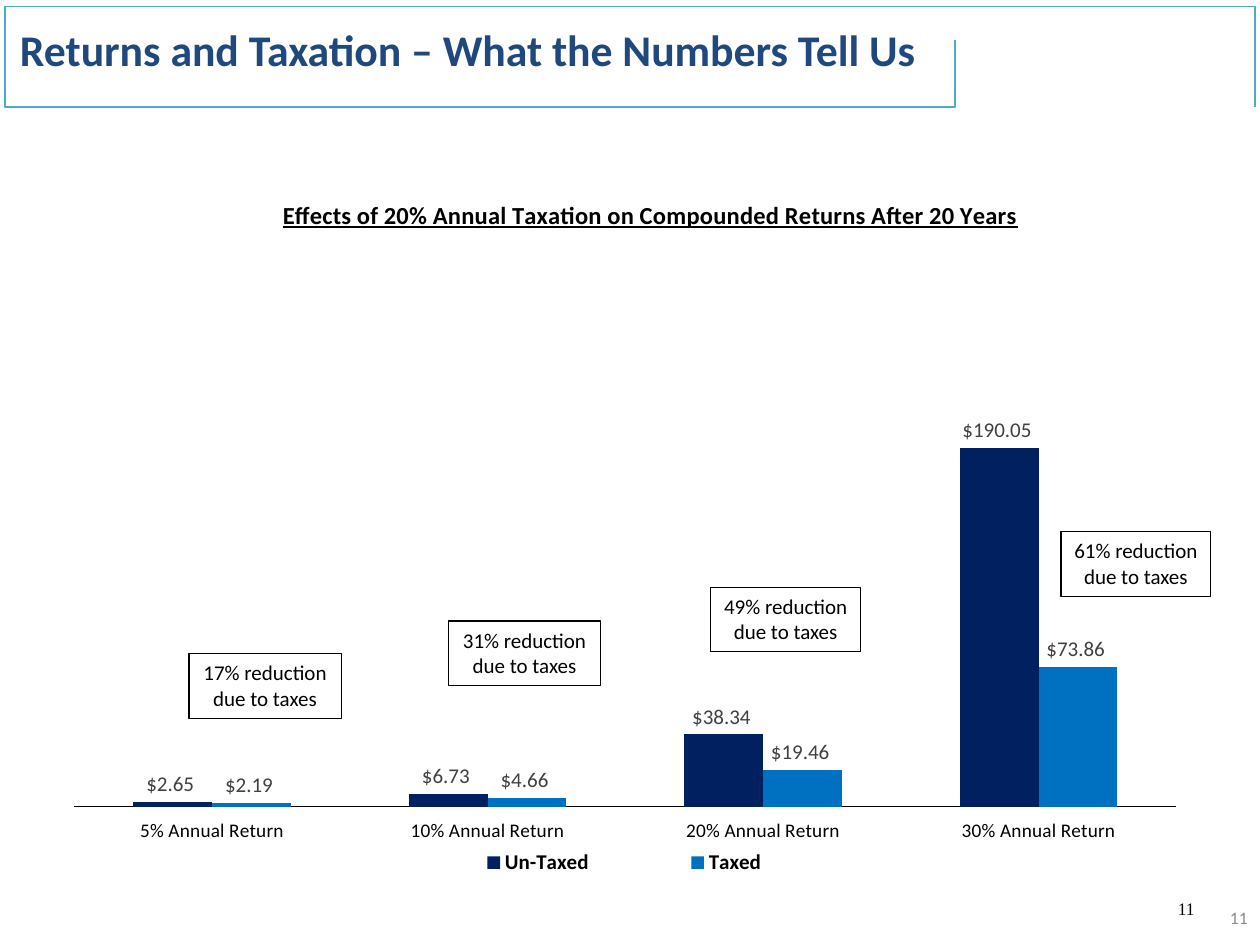
from dataclasses import dataclass

from lxml import etree
from pptx import Presentation
from pptx.chart.data import CategoryChartData
from pptx.dml.color import RGBColor
from pptx.enum.chart import XL_CHART_TYPE as ChartType
from pptx.enum.chart import XL_LABEL_POSITION as LabelPos
from pptx.enum.chart import XL_LEGEND_POSITION as LegendPos
from pptx.enum.chart import XL_TICK_LABEL_POSITION as TickLabelPos
from pptx.enum.chart import XL_TICK_MARK as TickMark
from pptx.enum.shapes import MSO_SHAPE as Shape
from pptx.enum.text import MSO_ANCHOR as Anchor
from pptx.enum.text import MSO_AUTO_SIZE as AutoSize
from pptx.enum.text import PP_ALIGN as Align
from pptx.oxml.ns import qn
from pptx.util import Cm, Pt


@dataclass(frozen=True)
class Theme:
    black: RGBColor = RGBColor(0, 0, 0)
    heading: RGBColor = RGBColor(0x1F, 0x49, 0x7D)
    frame: RGBColor = RGBColor(0x4B, 0xAC, 0xC6)
    untaxed: RGBColor = RGBColor(0x00, 0x20, 0x60)
    taxed: RGBColor = RGBColor(0x00, 0x70, 0xC0)
    label: RGBColor = RGBColor(0x40, 0x40, 0x40)
    page: RGBColor = RGBColor(0x8C, 0x8C, 0x8C)
    sans: str = "Calibri"
    serif: str = "Times New Roman"
    heading_size: Pt = Pt(25)
    title_size: Pt = Pt(14)
    body_size: Pt = Pt(12)
    axis_size: Pt = Pt(11)
    small_size: Pt = Pt(10)


theme = Theme()
DOLLARS = '"$"#,##0.00_);[Red]\\("$"#,##0.00\\)'


def apply_format(target, color=None, **values):
    for name, value in values.items():
        setattr(target, name, value)
    if color is not None:
        target.color.rgb = color


def place_part(part, index, **fractions):
    """Give a chart part a manual layout in fractions of the chart."""
    for old in part.findall(qn("c:layout")):
        part.remove(old)
    layout = etree.Element(qn("c:layout"))
    manual = etree.SubElement(layout, qn("c:manualLayout"))
    if part.tag == qn("c:plotArea"):
        etree.SubElement(manual, qn("c:layoutTarget")).set("val", "inner")
    for axis in "xy":
        etree.SubElement(manual, qn(f"c:{axis}Mode")).set("val", "edge")
    for name, value in fractions.items():
        etree.SubElement(manual, qn(f"c:{name}")).set("val", str(value))
    part.insert(index, layout)


prs = Presentation()
prs.slide_width, prs.slide_height = Cm(25.4), Cm(19.05)
slide = prs.slides.add_slide(prs.slide_layouts[6])

# Open frame around the heading
corners = [(19.25, 0.81), (19.25, 2.16), (0.1, 2.16), (0.1, 0.13), (25.3, 0.13), (25.3, 2.16)]
start, *rest = [(Cm(x), Cm(y)) for x, y in corners]
outline = slide.shapes.build_freeform(*start)
outline.add_line_segments(rest, close=False)
frame = outline.convert_to_shape()
frame.shadow.inherit = False
frame.fill.background()
apply_format(frame.line, color=theme.frame, width=Pt(0))

# Chart of compounded returns
returns = CategoryChartData(number_format=DOLLARS)
returns.categories = [f"{rate}% Annual Return" for rate in (5, 10, 20, 30)]
returns.add_series("Un-Taxed", (2.65, 6.73, 38.34, 190.05))
returns.add_series("Taxed", (2.19, 4.66, 19.46, 73.86))
chart = slide.shapes.add_chart(ChartType.COLUMN_CLUSTERED, Cm(1.27), Cm(3), Cm(22.86), Cm(14.99),
                               returns).chart
apply_format(chart.font, name=theme.sans, size=theme.small_size, color=theme.black)

# Chart title and legend
chart.has_title = True
chart_title = chart.chart_title
chart_title.text_frame.text = "Effects of 20% Annual Taxation on Compounded Returns After 20 Years"
apply_format(chart_title.text_frame.paragraphs[0].runs[0].font, name=theme.sans,
             size=theme.title_size, bold=True, underline=True, color=theme.black)
place_part(chart_title._element, 1, x=0.19, y=0.06)

chart.has_legend = True
apply_format(chart.legend, position=LegendPos.RIGHT, include_in_layout=False)
apply_format(chart.legend.font, name=theme.sans, size=theme.body_size, bold=True, color=theme.black)
place_part(chart.legend._element, 1, x=0.29, y=0.93, w=0.41, h=0.06)

# Axes
apply_format(chart.value_axis, visible=False, has_major_gridlines=False,
             minimum_scale=0, maximum_scale=325, major_unit=25)
apply_format(chart.category_axis, major_tick_mark=TickMark.NONE, minor_tick_mark=TickMark.NONE,
             tick_label_position=TickLabelPos.LOW)
apply_format(chart.category_axis.tick_labels.font, name=theme.sans, size=theme.axis_size,
             color=theme.black)
apply_format(chart.category_axis.format.line, color=theme.black, width=Pt(0.75))

# Columns and their values
plot = chart.plots[0]
apply_format(plot, gap_width=150, overlap=0, vary_by_categories=False)
for series, color in zip(plot.series, (theme.untaxed, theme.taxed)):
    series.format.fill.solid()
    series.format.fill.fore_color.rgb = color
    apply_format(series.data_labels, show_value=True, position=LabelPos.OUTSIDE_END,
                 number_format=DOLLARS, number_format_is_linked=False)
    apply_format(series.data_labels.font, name=theme.sans, size=theme.body_size, color=theme.label)
place_part(chart._chartSpace.chart.plotArea, 0, x=0.01, y=0.059, w=0.972, h=0.826)

# Heading and page numbers
page_box = (22.43, 17.98, 2.97, 1.02)
texts = [
    (page_box, "11", Anchor.TOP, dict(alignment=Align.CENTER),
     dict(name=theme.serif, size=theme.small_size, color=theme.black)),
    (page_box, "11", Anchor.MIDDLE, dict(alignment=Align.RIGHT),
     dict(name=theme.sans, size=theme.small_size, color=theme.page)),
    ((-2.54, 0.43, 23.93, 1.35), "Returns and Taxation – What the Numbers Tell Us", Anchor.MIDDLE,
     dict(alignment=Align.CENTER, line_spacing=0.75),
     dict(name=theme.sans, size=theme.heading_size, bold=True, color=theme.heading)),
]
for box, wording, anchor, paragraph_format, font_format in texts:
    text = slide.shapes.add_textbox(*map(Cm, box)).text_frame
    apply_format(text, text=wording, word_wrap=True, vertical_anchor=anchor)
    apply_format(text.paragraphs[0], **paragraph_format)
    apply_format(text.paragraphs[0].font, **font_format)

# Tax effect callouts
callouts = [(31, 9.04, 12.52, 3.07), (49, 14.33, 11.84, 3.02),
            (61, 21.39, 10.72, 3.02), (17, 3.81, 13.18, 3.07)]
for percent, left, top, width in callouts:
    callout = slide.shapes.add_shape(Shape.RECTANGLE, Cm(left), Cm(top), Cm(width), Cm(1.3))
    callout.shadow.inherit = False
    callout.fill.background()
    apply_format(callout.line, color=theme.black, width=Pt(0.75))
    text = callout.text_frame
    apply_format(text, text=f"{percent}% reduction due to taxes", word_wrap=True,
                 vertical_anchor=Anchor.TOP, auto_size=AutoSize.SHAPE_TO_FIT_TEXT)
    text.paragraphs[0].alignment = Align.CENTER
    apply_format(text.paragraphs[0].font, name=theme.sans, size=theme.body_size, color=theme.black)

prs.save("out.pptx")
